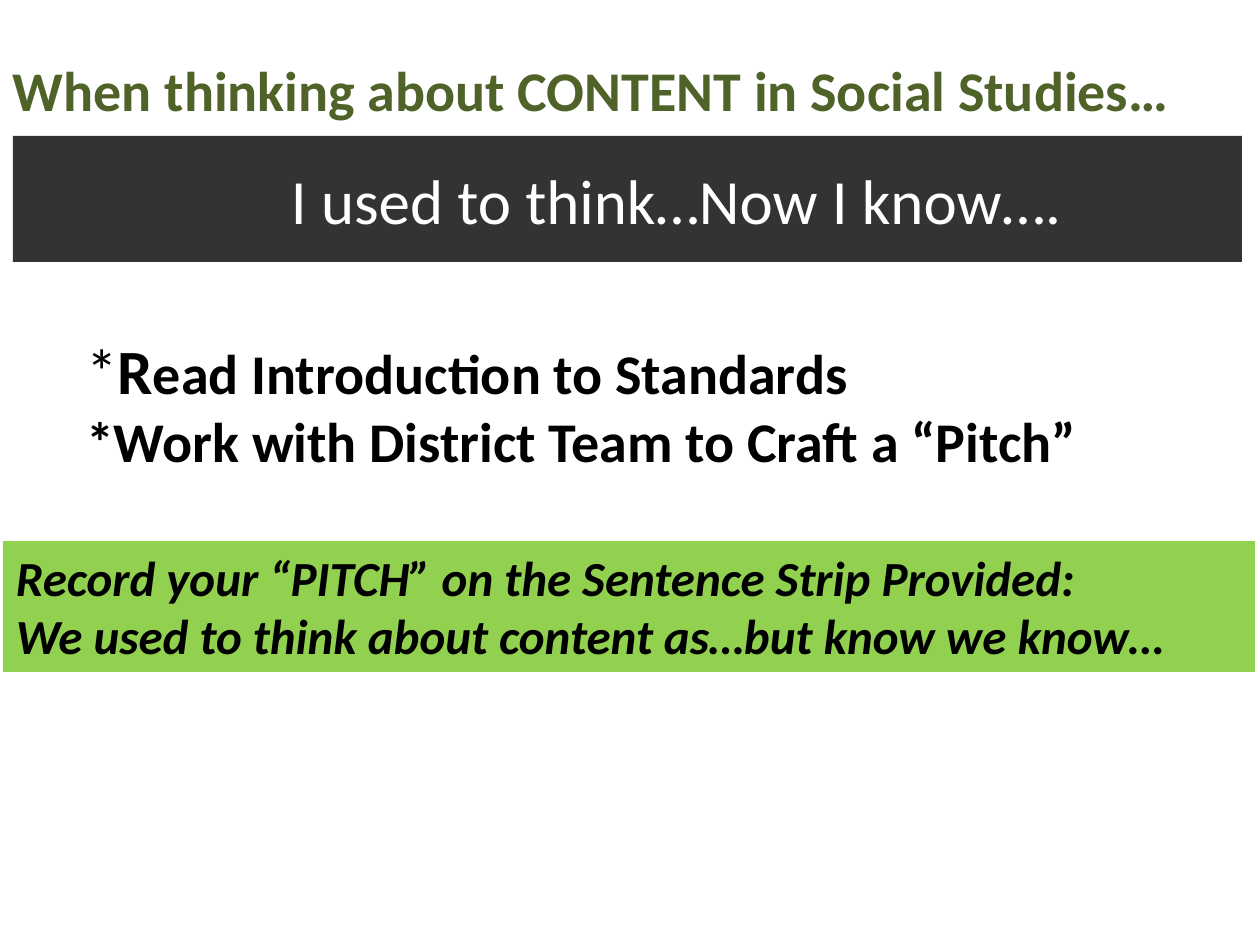
from pptx import Presentation
from pptx.dml.color import RGBColor
from pptx.enum.shapes import MSO_SHAPE
from pptx.enum.text import MSO_ANCHOR
from pptx.util import Pt

RECT = MSO_SHAPE.RECTANGLE
TOP, MID = MSO_ANCHOR.TOP, MSO_ANCHOR.MIDDLE
SCALE = 914400 / 126
FONT = "Calibri"
HEX = {"olive": "4F6228", "dark": "333333", "lime": "92D050",
       "white": "FFFFFF", "black": "000000"}

# Run formats
HEAD = {"size": Pt(32), "bold": True}
BAND = {"size": Pt(36), "bold": False}
STAR = {"size": Pt(36), "bold": False}
CAP = {"size": Pt(36), "bold": True}
TASK = {"size": Pt(32), "bold": True}
NOTE = {"size": Pt(28), "bold": True, "italic": True}

# Content: each line is a list of (text, format) runs
PARTS = [
    # Title
    {"box": (0, 10, 1255, 158), "ink": "olive", "anchor": MID, "lines": [
        [("When thinking about CONTENT in Social Studies…", HEAD)]]},
    # Dark band
    {"box": (13, 136, 1229, 126), "fill": "dark", "ink": "white",
     "anchor": MID, "left": 278, "lines": [
         [("I used to think…Now I know….", BAND)]]},
    # Green band
    {"box": (3, 541, 1252, 131), "fill": "lime", "ink": "black", "lines": [
        [("Record your “PITCH” on the Sentence Strip Provided:", NOTE)],
        [("We used to think about content as…but know we know…", NOTE)]]},
    # Tasks
    {"box": (73, 325, 1027, 158), "ink": "black", "left": 13, "lines": [
        [("*", STAR), ("R", CAP), ("ead Introduction to Standards", TASK)],
        [("*Work with District Team to Craft a “Pitch”", TASK)]]},
]


def px(n):
    return round(n * SCALE)


def color(name):
    return RGBColor.from_string(HEX[name])


def add_part(slide, part):
    box = [px(n) for n in part["box"]]
    if "fill" in part:
        shape = slide.shapes.add_shape(RECT, *box)
        shape.shadow.inherit = False
        shape.fill.solid()
        shape.fill.fore_color.rgb = color(part["fill"])
        shape.line.fill.background()
    else:
        shape = slide.shapes.add_textbox(*box)
    frame = shape.text_frame
    look = {"word_wrap": True, "vertical_anchor": part.get("anchor", TOP),
            "margin_left": px(part.get("left", 13)), "margin_right": px(13),
            "margin_top": px(6), "margin_bottom": px(6)}
    for key, val in look.items():
        setattr(frame, key, val)
    for i, line in enumerate(part["lines"]):
        para = frame.add_paragraph() if i else frame.paragraphs[0]
        para.alignment = 1  # left
        for text, form in line:
            run = para.add_run()
            run.text = text
            run.font.color.rgb = color(part["ink"])
            for key, val in {"name": FONT, **form}.items():
                setattr(run.font, key, val)


def main():
    deck = Presentation()
    deck.slide_width, deck.slide_height = px(1260), px(945)
    slide = deck.slides.add_slide(deck.slide_layouts[6])
    for part in PARTS:
        add_part(slide, part)
    deck.save("out.pptx")


if __name__ == "__main__":
    main()
